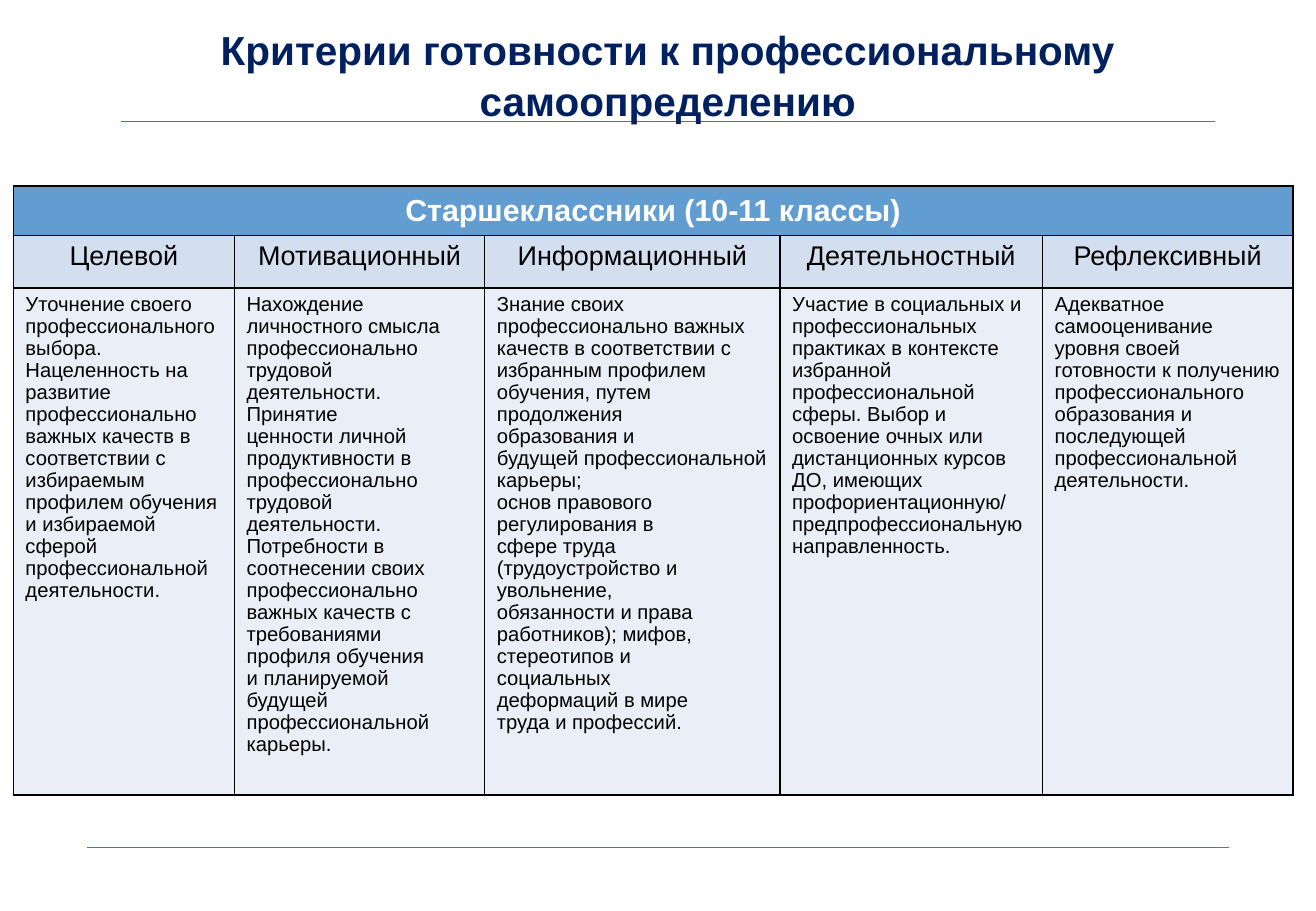
"""Builds a slide with a table of readiness criteria for professional self-determination."""
from lxml.etree import SubElement
from pptx import Presentation
from pptx.dml.color import RGBColor
from pptx.enum.shapes import MSO_CONNECTOR
from pptx.enum.text import MSO_ANCHOR, PP_ALIGN
from pptx.oxml import parse_xml
from pptx.oxml.ns import nsdecls, qn
from pptx.util import Inches, Pt

COLORS = {
    "accent": "297FD5", "title": "002060", "border": "000000", "text": "000000",
    "white": "FFFFFF", "grade": "629DD1", "criterion": "D3DFEE", "description": "EAEFF7",
}
WIDTH, HEIGHT = 10.83, 7.5
MARGIN = 0.72
COLUMN_WIDTHS = [1.82, 2.06, 2.43, 2.16, 2.06]
ROW_HEIGHTS = [0.41, 0.43, 4.1]

GRADE = "Старшеклассники (10-11 классы)"
CRITERIA = {
    "Целевой": """Уточнение своего
профессионального выбора.
Нацеленность на
развитие
профессионально
важных качеств в
соответствии с
избираемым профилем обучения и избираемой
сферой
профессиональной деятельности.""",
    "Мотивационный": """Нахождение личностного смысла
профессионально трудовой деятельности. Принятие
ценности личной
продуктивности в
профессионально трудовой
деятельности.
Потребности в соотнесении своих
профессионально важных качеств с
требованиями
профиля обучения
и планируемой будущей профессиональной карьеры.""",
    "Информационный": """Знание своих
профессионально важных качеств в соответствии с
избранным профилем
обучения, путем продолжения
образования и
будущей профессиональной карьеры;
основ правового
регулирования в
сфере труда
(трудоустройство и
увольнение,
обязанности и права
работников); мифов,
стереотипов и
социальных
деформаций в мире
труда и профессий.""",
    "Деятельностный": """Участие в социальных и
профессиональных
практиках в контексте
избранной профессиональной сферы. Выбор и
освоение очных или
дистанционных курсов
ДО, имеющих
профориентационную/
предпрофессиональную
направленность.""",
    "Рефлексивный": """Адекватное
самооценивание
уровня своей готовности к получению
профессионального
образования и
последующей
профессиональной
деятельности.""",
}


def write(frame, text, size, color="text", bold=False, align=PP_ALIGN.CENTER, spacing=1.0):
    frame.word_wrap = True
    frame.text = text
    for paragraph in frame.paragraphs:
        paragraph.alignment = align
        paragraph.line_spacing = spacing
        for run in paragraph.runs:
            run.font.name = "Arial"
            run.font.size = Pt(size)
            run.font.bold = bold
            run.font.color.rgb = RGBColor.from_string(COLORS[color])


def fill_cell(cell, color):
    cell.fill.solid()
    cell.fill.fore_color.rgb = RGBColor.from_string(COLORS[color])
    properties = cell._tc.get_or_add_tcPr()
    for position, side in enumerate(["lnL", "lnR", "lnT", "lnB"]):
        properties.insert(position, parse_xml(
            f'<a:{side} {nsdecls("a")} w="{Pt(1)}"><a:solidFill>'
            f'<a:srgbClr val="{COLORS["border"]}"/></a:solidFill></a:{side}>'))


presentation = Presentation()
presentation.slide_width = Inches(WIDTH)
presentation.slide_height = Inches(HEIGHT)
slide = presentation.slides.add_slide(presentation.slide_layouts[6])
accent = RGBColor.from_string(COLORS["accent"])

bar_top, bar_bottom, bar_right, rule_right = 0.99, 1.11, 6.24, 10.15
outline = slide.shapes.build_freeform(MARGIN, bar_top, scale=Inches(1))
outline.add_line_segments(
    [(bar_right, bar_top), (bar_right, bar_bottom), (MARGIN, bar_bottom)], close=True)
outline.move_to(MARGIN, bar_top)
outline.add_line_segments([(rule_right, bar_top)], close=False)
title_rule = outline.convert_to_shape()
title_rule.shadow.inherit = False
title_rule.fill.solid()
title_rule.fill.fore_color.rgb = accent
title_rule.line.color.rgb = accent
title_rule.line.width = Pt(0.75)

footer_rule = slide.shapes.add_connector(
    MSO_CONNECTOR.STRAIGHT, Inches(MARGIN), Inches(0.93 * HEIGHT),
    Inches(10.11), Inches(0.93 * HEIGHT))
footer_rule.line.color.rgb = accent
footer_rule.line.width = Pt(0.25)
SubElement(footer_rule._element.spPr, qn("a:effectLst"))

title = slide.shapes.add_textbox(Inches(MARGIN), Inches(0.14), Inches(9.55), Inches(0.91))
write(title.text_frame, "Критерии готовности к профессиональному самоопределению",
      size=24, color="title", bold=True, spacing=1.05)

criteria_table = slide.shapes.add_table(
    len(ROW_HEIGHTS), len(COLUMN_WIDTHS), Inches(0.11), Inches(1.53),
    Inches(sum(COLUMN_WIDTHS)), Inches(sum(ROW_HEIGHTS))).table
criteria_table.first_row = False
criteria_table.horz_banding = False
for row, row_height in zip(criteria_table.rows, ROW_HEIGHTS):
    row.height = Inches(row_height)
for column, column_width in zip(criteria_table.columns, COLUMN_WIDTHS):
    column.width = Inches(column_width)
for row, level in zip(criteria_table.rows, ["grade", "criterion", "description"]):
    for cell in row.cells:
        fill_cell(cell, level)

grade_cell = criteria_table.cell(0, 0)
grade_cell.merge(criteria_table.cell(0, len(COLUMN_WIDTHS) - 1))
grade_cell.vertical_anchor = MSO_ANCHOR.MIDDLE
write(grade_cell.text_frame, GRADE, size=18, color="white", bold=True)
for index, (criterion, description) in enumerate(CRITERIA.items()):
    write(criteria_table.cell(1, index).text_frame, criterion, size=16)
    write(criteria_table.cell(2, index).text_frame, description,
          size=12, align=PP_ALIGN.LEFT, spacing=0.97)

presentation.save("out.pptx")
